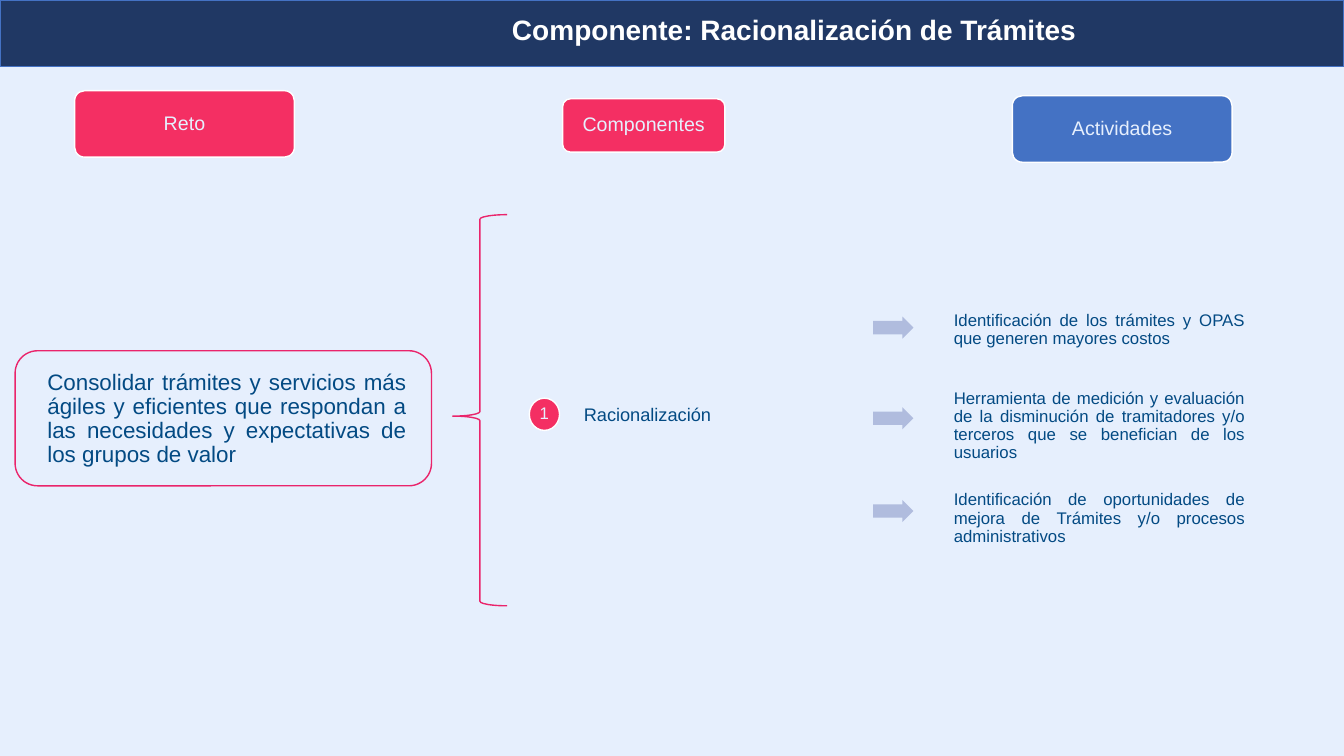
from pptx import Presentation
from pptx.dml.color import RGBColor
from pptx.enum.shapes import MSO_SHAPE
from pptx.enum.text import MSO_ANCHOR, PP_ALIGN
from pptx.util import Pt

PX = 9144  # 100 px to the inch
RECT, ROUNDED, OVAL = MSO_SHAPE.RECTANGLE, MSO_SHAPE.ROUNDED_RECTANGLE, MSO_SHAPE.OVAL
ARROW, BRACE = MSO_SHAPE.RIGHT_ARROW, MSO_SHAPE.LEFT_BRACE
LEFT, CENTER, JUSTIFY = PP_ALIGN.LEFT, PP_ALIGN.CENTER, PP_ALIGN.JUSTIFY
MIDDLE = MSO_ANCHOR.MIDDLE

PALE, NAVY, BLUE, WHITE = "E6EFFD", "203864", "4472C4", "FFFFFF"
PINK, MAGENTA, INK, LILAC = "F42F63", "EA246B", "034A83", "B0BCDE"

HEADINGS = [
    ("Reto", PINK, (74, 90, 218, 66)),
    ("Componentes", PINK, (558, 98, 161, 53)),
    ("Actividades", BLUE, (1004, 95, 218, 66)),
]
CHALLENGE = ("Consolidar trámites y servicios más ágiles y eficientes que respondan a "
             "las necesidades y expectativas de los grupos de valor")
# Activity, top of its arrow, top and height of its text
ACTIVITIES = [
    ("Identificación de los trámites y OPAS que generen mayores costos", 314, 245, 165),
    ("Herramienta de medición y evaluación de la disminución de tramitadores y/o "
     "terceros que se benefician de los usuarios", 404, 364, 117),
    ("Identificación de oportunidades de mejora de Trámites y/o procesos "
     "administrativos", 496, 456, 117),
]


def rgb(color):
    return RGBColor.from_string(color)


def emu(box):
    return [length * PX for length in box]


def add_shape(slide, preset, box, fill=None, line=None, adjustments=()):
    shape = slide.shapes.add_shape(preset, *emu(box))
    shape.shadow.inherit = False
    for index, value in enumerate(adjustments):
        shape.adjustments[index] = value
    if fill:
        shape.fill.solid()
        shape.fill.fore_color.rgb = rgb(fill)
    else:
        shape.fill.background()
    if line:
        shape.line.color.rgb = rgb(line)
        shape.line.width = Pt(1)
    else:
        shape.line.fill.background()
    return shape


def write(shape, text, size, color, align, inset, bold=False):
    frame = shape.text_frame
    frame.word_wrap = True
    frame.vertical_anchor = MIDDLE
    frame.margin_left = frame.margin_right = inset * PX
    frame.margin_top = frame.margin_bottom = inset * PX
    frame.text = text
    paragraph = frame.paragraphs[0]
    paragraph.alignment = align
    paragraph.line_spacing = 0.9
    font = paragraph.runs[0].font
    font.name, font.size, font.bold = "Arial", Pt(size), bold
    font.color.rgb = rgb(color)


def add_text(slide, box, text, size, color=INK, align=JUSTIFY, inset=2, bold=False):
    write(slide.shapes.add_textbox(*emu(box)), text, size, color, align, inset, bold)


def title_bar(slide, box):
    left, top, width, height = box
    add_shape(slide, RECT, box, NAVY, BLUE)
    add_text(slide, (left + 498, top + 13, 653, 36),
             "Componente: Racionalización de Trámites", 20, WHITE, LEFT, 10, True)


def heading(slide, box, text, fill):
    shape = add_shape(slide, ROUNDED, box, fill, WHITE, [0.15])
    write(shape, text, 14, PALE, CENTER, 6)


def challenge(slide, box):
    left, top, width, height = box
    add_shape(slide, ROUNDED, box, line=MAGENTA)
    add_text(slide, (left + 30, top + 2, 360, height - 2), CHALLENGE, 16)


def component(slide, box):
    """Brace over the full height, with the numbered component beside its tip."""
    left, top, width, height = box
    add_shape(slide, BRACE, (left, top, 54, height), line=MAGENTA,
              adjustments=[0.083, 0.515])
    number = add_shape(slide, OVAL, (left + 76, top + 182, 30, 32), PINK, WHITE)
    number.text_frame.word_wrap = False
    write(number, "1", 12, PALE, CENTER, 6)
    add_text(slide, (left + 128, top + 170, width - 128, 59), "Racionalización", 13)


def activities(slide, left, width):
    for text, arrow_top, text_top, text_height in ACTIVITIES:
        add_shape(slide, ARROW, (left, arrow_top, 40, 22), LILAC,
                  adjustments=[0.6, 0.5])
        add_text(slide, (left + 78, text_top, width - 78, text_height), text, 12)


def main():
    deck = Presentation()
    deck.slide_width, deck.slide_height = emu((1333, 750))
    slide = deck.slides.add_slide(deck.slide_layouts[6])
    slide.background.fill.solid()
    slide.background.fill.fore_color.rgb = rgb(PALE)
    title_bar(slide, (0, 0, 1333, 66))
    for text, fill, box in HEADINGS:
        heading(slide, box, text, fill)
    challenge(slide, (15, 348, 413, 134))
    component(slide, (449, 213, 323, 388))
    activities(slide, 866, 371)
    deck.save("out.pptx")


if __name__ == "__main__":
    main()
